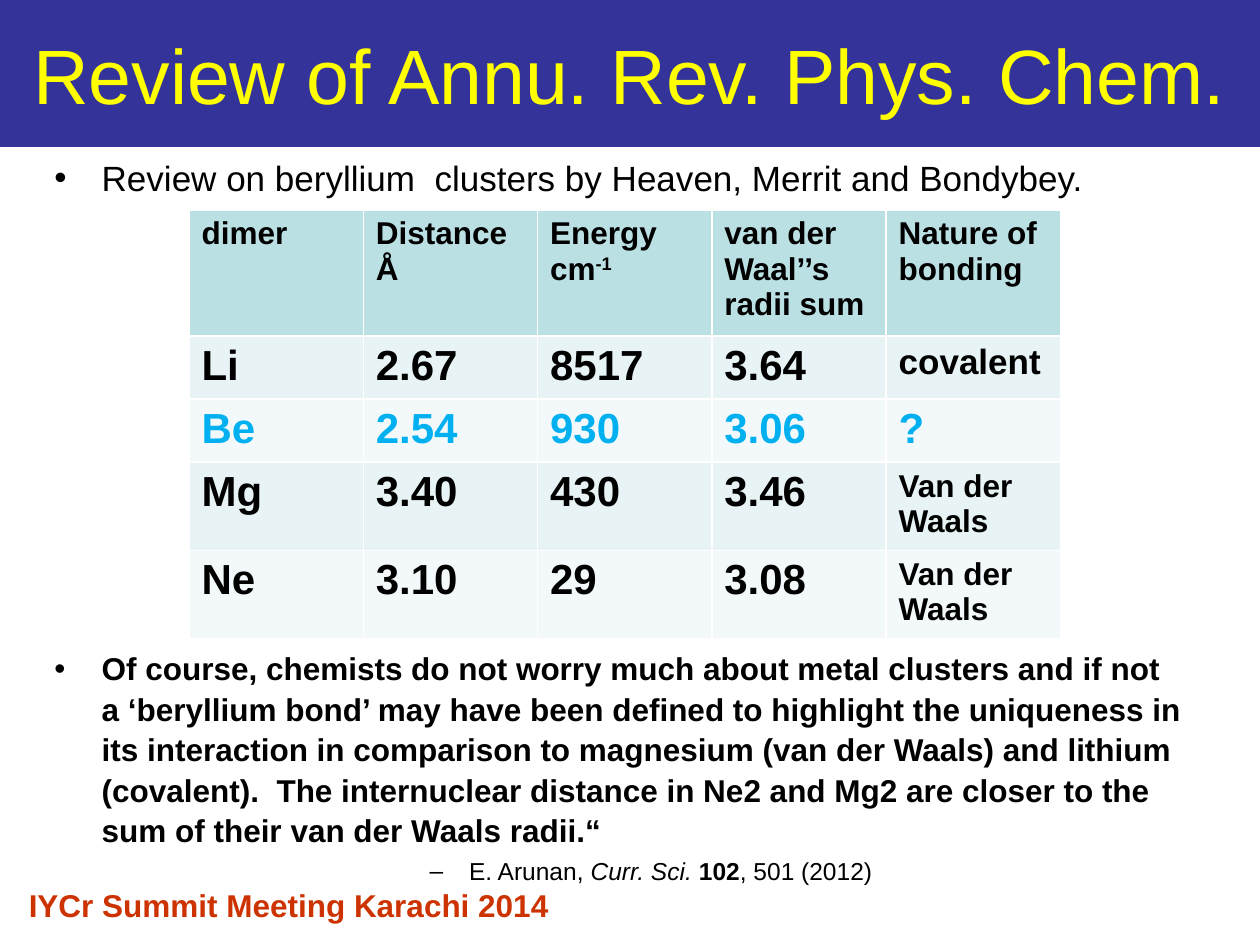
"""Build the slide on bonding in metal dimers."""
from pptx import Presentation
from pptx.dml.color import RGBColor as Rgb
from pptx.enum.shapes import MSO_SHAPE as Kind
from pptx.enum.text import MSO_ANCHOR as Anchor, PP_ALIGN as Align
from pptx.oxml.ns import qn
from pptx.util import Pt
from lxml.etree import SubElement as Sub

hues = {
    "band": "333399", "title": "FFFF00", "text": "000000", "mark": "00B0F0",
    "foot": "CC3300", "head": "BBE0E3", "odd": "E7F3F4", "even": "F3F9FA",
}


def style(run, size, hue="text", bold=False):
    font = run.font
    font.name, font.size, font.bold = "Arial", Pt(size), bold
    font.color.rgb = Rgb.from_string(hues[hue])


def bullet(para, sign, left, hang):
    props = para._p.get_or_add_pPr()
    props.set("marL", str(Pt(left)))
    props.set("indent", str(-Pt(hang)))
    Sub(props, qn("a:buFont")).set("typeface", "Arial")
    Sub(props, qn("a:buChar")).set("char", sign)


deck = Presentation()
deck.slide_width, deck.slide_height = Pt(720), Pt(540)
slide = deck.slides.add_slide(deck.slide_layouts[6])
shapes = slide.shapes

band = shapes.add_shape(Kind.RECTANGLE, 0, 0, Pt(720), Pt(84))
band.shadow.inherit = False
band.fill.solid()
band.fill.fore_color.rgb = Rgb.from_string(hues["band"])
band.line.fill.background()
frame = band.text_frame
frame.word_wrap = True
frame.vertical_anchor = Anchor.MIDDLE
frame.text = "Review of Annu. Rev. Phys. Chem."
frame.paragraphs[0].alignment = Align.CENTER
style(frame.paragraphs[0].runs[0], 44, "title")

body = shapes.add_textbox(Pt(24), Pt(86), Pt(660), Pt(442)).text_frame
body.word_wrap = True
intro = body.paragraphs[0]
intro.text = "Review on beryllium  clusters by Heaven, Merrit and Bondybey."
bullet(intro, "•", 27, 27)
style(intro.runs[0], 20)

claim = body.add_paragraph()
claim.text = (
    "Of course, chemists do not worry much about metal clusters and if not "
    "a ‘beryllium bond’ may have been defined to highlight the uniqueness in "
    "its interaction in comparison to magnesium (van der Waals) and lithium "
    "(covalent).  The internuclear distance in Ne2 and Mg2 are closer to the "
    "sum of their van der Waals radii.“"
)
bullet(claim, "•", 27, 27)
claim.space_before, claim.line_spacing = Pt(256), 1.07
style(claim.runs[0], 18, bold=True)

cite = body.add_paragraph()
bullet(cite, "–", 58.5, 22.5)
cite.level, cite.alignment = 1, Align.CENTER
cite.space_before, cite.line_spacing = Pt(2.8), 1.07
for text, bold, slant in [
    ("E. Arunan, ", False, False), ("Curr. Sci. ", False, True),
    ("102", True, False), (", 501 (2012)", False, False),
]:
    run = cite.add_run()
    run.text = text
    style(run, 14, bold=bold)
    run.font.italic = slant

rows = [
    ["dimer", "Distance\nÅ", "Energy\ncm", "van der\nWaal’’s radii sum", "Nature of bonding"],
    ["Li", "2.67", "8517", "3.64", "covalent"],
    ["Be", "2.54", "930", "3.06", "?"],
    ["Mg", "3.40", "430", "3.46", "Van der Waals"],
    ["Ne", "3.10", "29", "3.08", "Van der Waals"],
]
highs = [67.5, 34, 34, 47.5, 47.5]
sizes = {"covalent": 20, "Van der Waals": 18}
table = shapes.add_table(5, 5, Pt(108), Pt(120), Pt(498), Pt(sum(highs))).table
for col in table.columns:
    col.width = Pt(99.6)
for r, (row, high) in enumerate(zip(rows, highs)):
    table.rows[r].height = Pt(high)
    fill = "head" if r == 0 else "odd" if r % 2 else "even"
    for c, text in enumerate(row):
        cell = table.cell(r, c)
        cell.fill.solid()
        cell.fill.fore_color.rgb = Rgb.from_string(hues[fill])
        cell.text_frame.text = text
        size = sizes.get(text, 24) if r else 18
        for para in cell.text_frame.paragraphs:
            style(para.runs[0], size, "mark" if row[0] == "Be" else "text", True)

power = table.cell(0, 2).text_frame.paragraphs[1].add_run()
power.text = "-1"
style(power, 18, bold=True)
power.font._element.set("baseline", "30000")

foot = shapes.add_textbox(0, Pt(503), Pt(330), Pt(37)).text_frame
foot.word_wrap = True
foot.text = "IYCr Summit Meeting Karachi 2014"
foot.paragraphs[0].alignment = Align.CENTER
style(foot.paragraphs[0].runs[0], 18, "foot", True)

deck.save("out.pptx")
